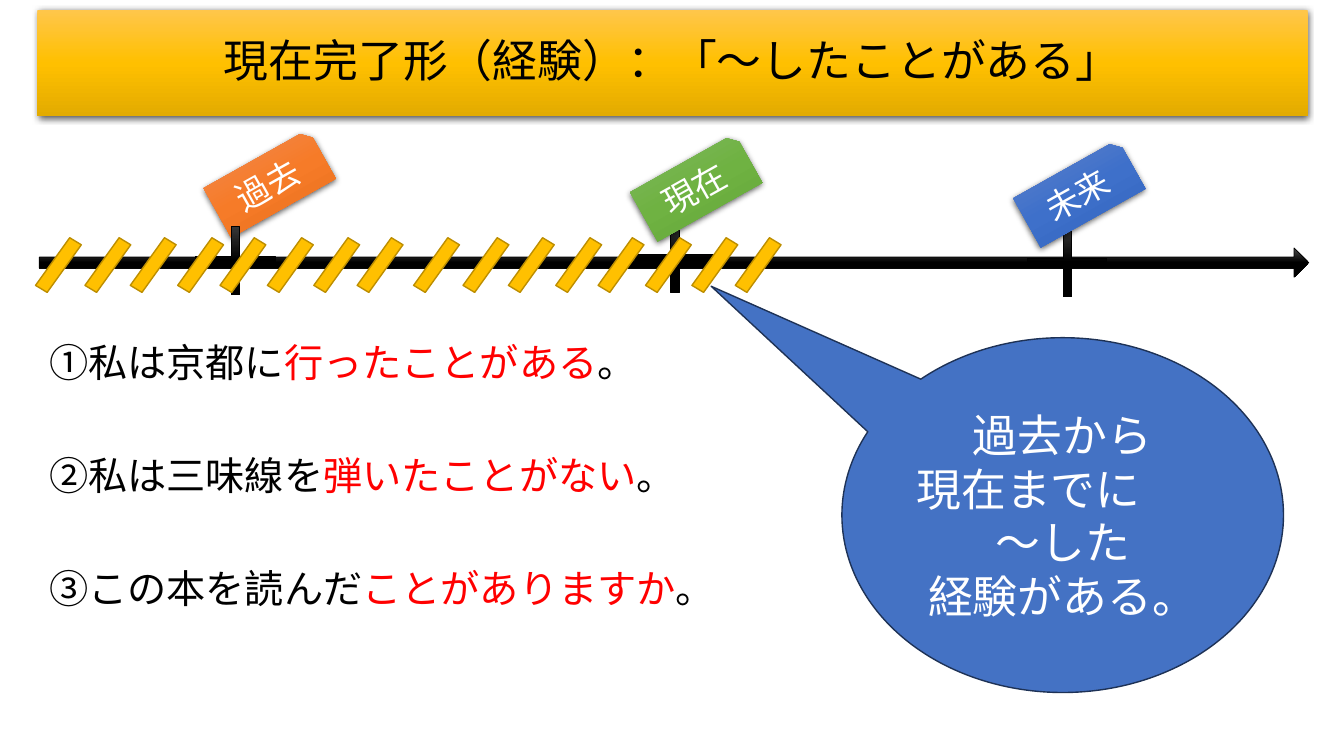
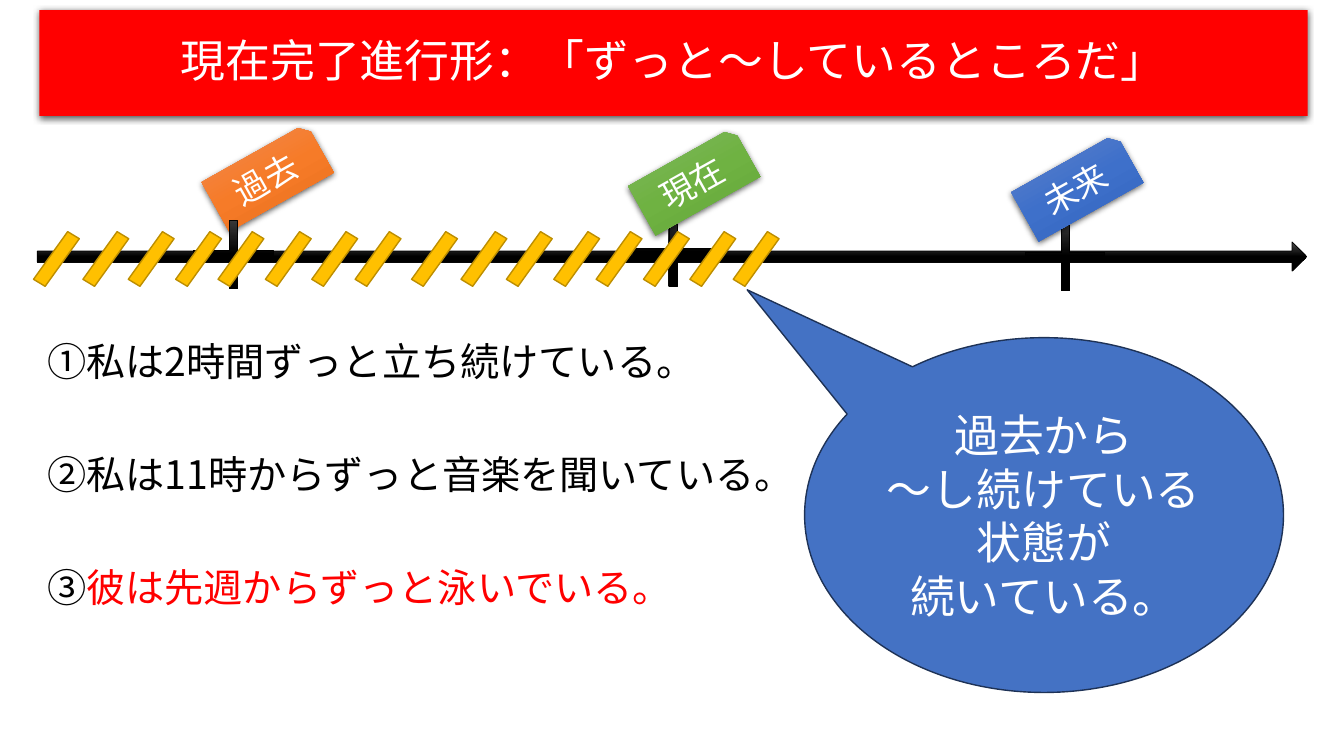
from lxml import etree
from pptx import Presentation
from pptx.dml.color import RGBColor
from pptx.enum.shapes import MSO_SHAPE
from pptx.enum.text import MSO_ANCHOR, PP_ALIGN
from pptx.oxml.ns import qn
from pptx.util import Inches, Pt

FONT = "Noto Sans CJK JP"
BLACK = RGBColor(0x00, 0x00, 0x00)
WHITE = RGBColor(0xFF, 0xFF, 0xFF)
RED = RGBColor(0xFF, 0x00, 0x00)
AMBER = RGBColor(0xFF, 0xC0, 0x00)
AMBER_EDGE = RGBColor(0xBD, 0x8E, 0x00)
BLUE = RGBColor(0x44, 0x72, 0xC4)
BLUE_EDGE = RGBColor(0x1E, 0x32, 0x56)

# Vertical gradients: top, middle, bottom
AMBER_SHEEN = (RGBColor(0xFF, 0xC6, 0x4B), AMBER, RGBColor(0xE3, 0xAB, 0x00))
BLACK_SHEEN = (RGBColor(0x4B, 0x4B, 0x4B), BLACK, BLACK)
ORANGE_SHEEN = (RGBColor(0xF1, 0x8C, 0x57), RGBColor(0xF6, 0x7B, 0x28), RGBColor(0xE5, 0x6C, 0x19))
GREEN_SHEEN = (RGBColor(0x81, 0xB8, 0x61), RGBColor(0x6F, 0xB2, 0x42), RGBColor(0x62, 0xA3, 0x36))
BLUE_SHEEN = (RGBColor(0x61, 0x83, 0xCB), RGBColor(0x3E, 0x70, 0xCA), RGBColor(0x30, 0x62, 0xBB))

RECT_TAG = MSO_SHAPE.SNIP_ROUND_RECTANGLE
ARROW = MSO_SHAPE.RIGHT_ARROW
PLUS = MSO_SHAPE.MATH_PLUS
STRIPE = MSO_SHAPE.PARALLELOGRAM
CALLOUT = MSO_SHAPE.OVAL_CALLOUT
LEFT, CENTER = PP_ALIGN.LEFT, PP_ALIGN.CENTER
TOP, MIDDLE = MSO_ANCHOR.TOP, MSO_ANCHOR.MIDDLE

TITLE_ONLY = 5
STRIPE_GROUPS = (0.49, 4.24)
STRIPE_OFFSETS = (0, 0.49, 0.94, 1.41, 1.83, 2.3, 2.76, 3.19)


def write_text(frame, lines, size, color, align=CENTER, anchor=MIDDLE,
               line_spacing=None, gap=0, inset=None):
    """Write lines; each is a string or a list of (text, colour) runs."""
    frame.word_wrap = True
    frame.vertical_anchor = anchor
    if inset is not None:
        frame.margin_left = frame.margin_right = inset
        frame.margin_top = frame.margin_bottom = inset
    for index, line in enumerate(lines):
        paragraph = frame.paragraphs[0] if index == 0 else frame.add_paragraph()
        paragraph.alignment = align
        paragraph.line_spacing = line_spacing
        paragraph.space_before = Pt(gap if index else 0)
        for text, run_color in [(line, color)] if isinstance(line, str) else line:
            run = paragraph.add_run()
            run.text = text
            run.font.size = Pt(size)
            run.font.color.rgb = run_color
            run.font.name = FONT
            etree.SubElement(run.font._element, qn("a:ea"), typeface=FONT)


def paint(shape, fill, edge=None, edge_width=1, shadow=False):
    """Fill with one colour or a three-colour gradient, then set edge and shadow."""
    properties = shape._element.spPr
    if isinstance(fill, RGBColor):
        shape.fill.solid()
        shape.fill.fore_color.rgb = fill
    else:
        shape.fill.gradient()
        shape.fill.gradient_angle = 270
        stops = properties.find(".//" + qn("a:gsLst"))
        for stop in list(stops):
            stops.remove(stop)
        for position, color in zip((0, 50000, 100000), fill):
            stop = etree.SubElement(stops, qn("a:gs"), pos=str(position))
            etree.SubElement(stop, qn("a:srgbClr"), val=str(color))
    if edge is None:
        shape.line.fill.background()
    else:
        shape.line.color.rgb = edge
        shape.line.width = Pt(edge_width)
    shape.shadow.inherit = False
    if shadow:
        outer = etree.SubElement(
            properties.find(qn("a:effectLst")), qn("a:outerShdw"),
            blurRad=str(Pt(4.5)), dist=str(Pt(1.5)), dir="5400000", rotWithShape="0")
        tint = etree.SubElement(outer, qn("a:srgbClr"), val=str(BLACK))
        etree.SubElement(tint, qn("a:alpha"), val="63000")


class Lesson:
    def __init__(self):
        self.deck = Presentation()
        self.deck.slide_width = Inches(13.33)
        self.deck.slide_height = Inches(7.5)
        self.slide = None

    def start_slide(self, title, fill, color, left):
        self.slide = self.deck.slides.add_slide(self.deck.slide_layouts[TITLE_ONLY])
        band = self.slide.shapes.title
        band.left, band.top = Inches(left), Inches(0.1)
        band.width, band.height = Inches(12.97 - left), Inches(1.05)
        paint(band, fill, shadow=True)
        write_text(band.text_frame, [title], 32, color, line_spacing=0.9)

    def add_shape(self, kind, box, adjustments=(), rotation=0, parent=None, **style):
        shapes = (parent or self.slide).shapes
        shape = shapes.add_shape(kind, *(Inches(length) for length in box))
        for index, value in enumerate(adjustments):
            shape.adjustments[index] = value
        shape.rotation = rotation
        paint(shape, **style)
        return shape

    def add_examples(self, sentences, left, top):
        box = self.slide.shapes.add_textbox(
            Inches(left), Inches(top), Inches(11.14), Inches(4.06))
        write_text(box.text_frame, sentences, 28, BLACK, align=LEFT, anchor=TOP,
                   line_spacing=0.9, gap=50.6)

    def add_tag(self, group, label, x, y, fill):
        tag = self.add_shape(RECT_TAG, (x, y, 1.19, 0.56), (0, 0.167), 330.7,
                             group, fill=fill, shadow=True)
        write_text(tag.text_frame, [label], 24, WHITE, inset=0)

    def add_timeline(self, dx=0, dy=0):
        """Draw the time axis, shifted by dx and dy inches."""
        group = self.slide.shapes.add_group_shape()
        ink = dict(parent=group, fill=BLACK_SHEEN, edge=BLACK, edge_width=0.5)
        # The past tag lies behind the axis, the other two in front of it
        self.add_tag(group, "過去", 2.08 + dx, 1.54 + dy, ORANGE_SHEEN)
        self.add_shape(ARROW, (0.39 + dx, 2.46 + dy, 12.59, 0.29), (0.375, 0.5), **ink)
        for x, y in ((6.16, 2.11), (1.8, 2.13), (10.05, 2.15)):
            self.add_shape(PLUS, (x + dx, y + dy, 1.07, 0.91), (0.09,), **ink)
        self.add_tag(group, "現在", 6.31 + dx, 1.58 + dy, GREEN_SHEEN)
        self.add_tag(group, "未来", 10.11 + dx, 1.64 + dy, BLUE_SHEEN)
        for start in STRIPE_GROUPS:
            for offset in STRIPE_OFFSETS:
                self.add_shape(STRIPE, (start + offset + dx, 2.34 + dy, 0.18, 0.58),
                               rotation=31.2, parent=group, fill=AMBER, edge=AMBER_EDGE)

    def add_callout(self, lines, left, pointer):
        bubble = self.add_shape(CALLOUT, (left, 3.35, 12.73 - left, 3.52), pointer,
                                fill=BLUE, edge=BLUE_EDGE)
        write_text(bubble.text_frame, lines, 32, WHITE)
        return bubble


def main():
    lesson = Lesson()

    lesson.start_slide("現在完了形（経験）：「～したことがある」", AMBER_SHEEN, BLACK, 0.37)
    experiences = (("①私は京都に", "行ったことがある"),
                   ("②私は三味線を", "弾いたことがない"),
                   ("③この本を読んだ", "ことがありますか"))
    lesson.add_examples([[(opening, BLACK), (key, RED), ("。", BLACK)]
                         for opening, key in experiences], 0.39, 3.36)
    lesson.add_timeline()
    meaning = lesson.add_callout(["過去から", "現在までに", "～した", "経験がある。"],
                                 8.35, (-0.796, -0.645))
    meaning.text_frame.paragraphs[1].alignment = LEFT

    lesson.start_slide("現在完了進行形：「ずっと～しているところだ」", RED, WHITE, 0.39)
    lesson.add_examples(["①私は2時間ずっと立ち続けている。",
                         "②私は11時からずっと音楽を聞いている。",
                         [("③", BLACK), ("彼は先週からずっと泳いでいる。", RED)]], 0.37, 3.35)
    lesson.add_timeline(dx=-0.02, dy=-0.06)
    lesson.add_callout(["過去から", "～し続けている", "状態が", "続いている。"],
                       7.98, (-0.62, -0.635))

    lesson.deck.save("out.pptx")


if __name__ == "__main__":
    main()
